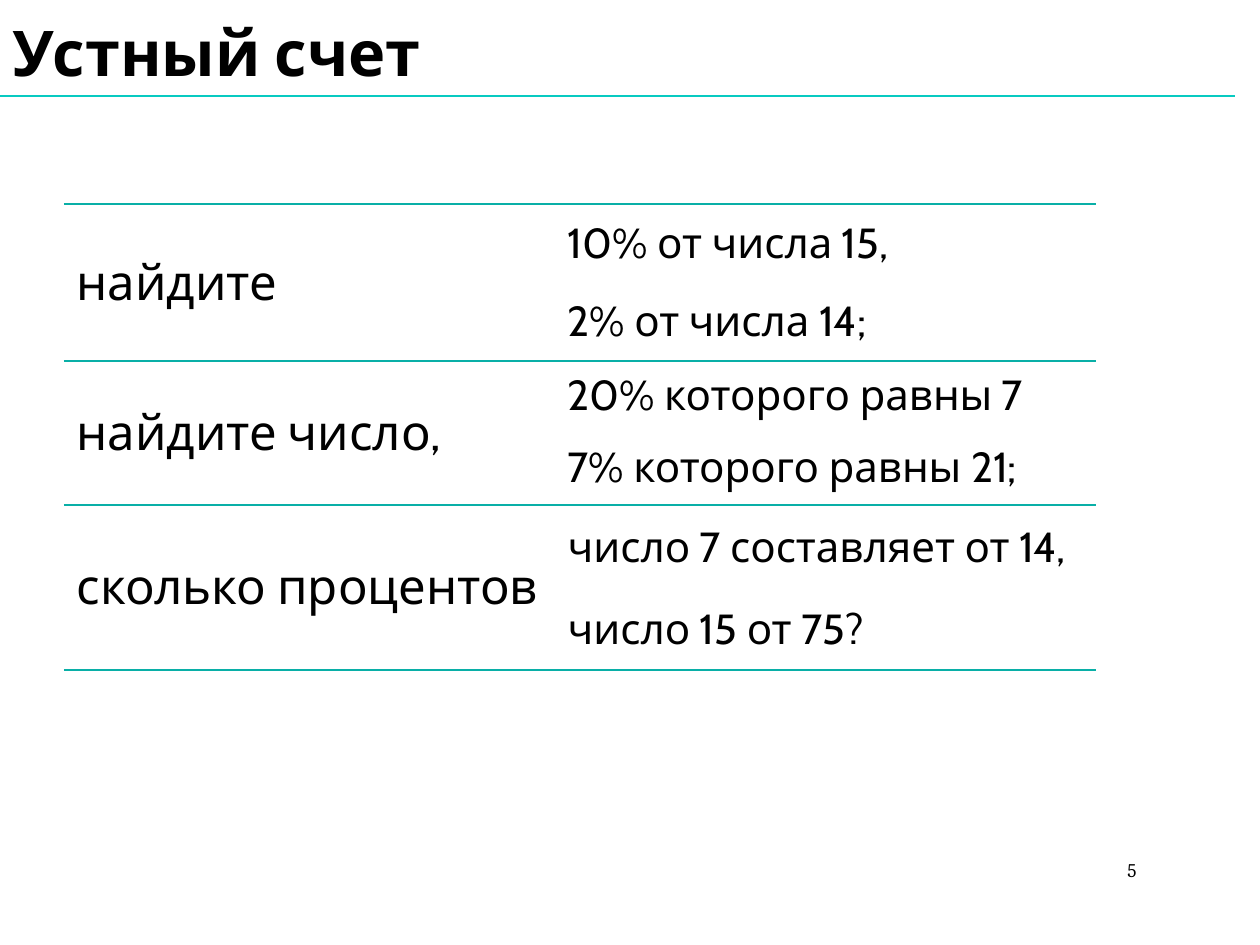
import pptx
import pptx.util
import pptx.oxml
import pptx.oxml.ns
import pptx.dml.color
import pptx.enum.shapes
import pptx.enum.text

PX = 914400 // 126
COLORS = {"text": "000000", "title_rule": "08CAC1", "table_rule": "09AFA7"}
ALIGN = pptx.enum.text.PP_ALIGN
ANCHOR = pptx.enum.text.MSO_ANCHOR

FORMATS = {
    "title": {"name": "Cabin", "size": pptx.util.Pt(36), "bold": True},
    "task": {"name": "Cabin", "size": pptx.util.Pt(28), "bold": False},
    "example": {"name": "Cabin", "size": pptx.util.Pt(24), "bold": False},
    "number": {"name": "Cambria", "size": pptx.util.Pt(11), "bold": False},
}
TASKS = [
    ("найдите", ["10% от числа 15,", "2% от числа 14;"]),
    ("найдите число,", ["20% которого равны 7", "7% которого равны 21;"]),
    ("сколько процентов", ["число 7 составляет от 14,", "число 15 от 75?"]),
]
COLUMN_WIDTHS = [491, 541]
ROW_HEIGHTS = [79, 78, 69, 75, 85, 80]


def px(*lengths):
    return [pptx.util.Emu(length * PX) for length in lengths]


def rgb(color):
    return pptx.dml.color.RGBColor.from_string(COLORS[color])


def write(paragraph, text, style):
    run = paragraph.add_run()
    run.text = text
    for attribute, value in FORMATS[style].items():
        setattr(run.font, attribute, value)
    run.font.color.rgb = rgb("text")


def add_text(slide, box, text, style, anchor, align=ALIGN.LEFT, spacing=1.0):
    frame = slide.shapes.add_textbox(*px(*box)).text_frame
    frame.word_wrap = True
    frame.vertical_anchor = anchor
    paragraph = frame.paragraphs[0]
    paragraph.alignment = align
    paragraph.line_spacing = spacing
    write(paragraph, text, style)


def add_rule(slide, ends, color, width):
    rule = slide.shapes.add_connector(
        pptx.enum.shapes.MSO_CONNECTOR.STRAIGHT, *px(*ends))
    rule.line.color.rgb = rgb(color)
    rule.line.width = pptx.util.Pt(width)
    pptx.oxml.ns.qn("a:effectLst")
    rule._element.spPr.append(pptx.oxml.parse_xml(
        f'<a:effectLst {pptx.oxml.ns.nsdecls("a")}/>'))


def set_borders(cell, ruled_sides):
    """Rule the given sides and clear the others; borders precede the fill."""
    properties = cell._tc.get_or_add_tcPr()
    for index, side in enumerate(["L", "R", "T", "B"]):
        fill = "<a:noFill/>"
        if side in ruled_sides:
            fill = (f'<a:solidFill><a:srgbClr val="{COLORS["table_rule"]}"/>'
                    '</a:solidFill>')
        properties.insert(index, pptx.oxml.parse_xml(
            f'<a:ln{side} {pptx.oxml.ns.nsdecls("a")} w="12700">'
            f'{fill}</a:ln{side}>'))


def format_cell(cell, ruled_sides):
    cell.fill.background()
    cell.vertical_anchor = ANCHOR.MIDDLE
    cell.margin_top, cell.margin_bottom = px(4, 4)
    set_borders(cell, ruled_sides)


def add_task_table(slide, left, top):
    table = slide.shapes.add_table(
        len(ROW_HEIGHTS), len(COLUMN_WIDTHS),
        *px(left, top, sum(COLUMN_WIDTHS), sum(ROW_HEIGHTS))).table
    table.first_row = False
    table.horz_banding = False
    for column, width in zip(table.columns, px(*COLUMN_WIDTHS)):
        column.width = width
    for row, height in zip(table.rows, px(*ROW_HEIGHTS)):
        row.height = height

    # Each task spans the two rows of its examples
    for index, (task, examples) in enumerate(TASKS):
        first = 2 * index
        task_cell = table.cell(first, 0)
        task_cell.merge(table.cell(first + 1, 0))
        write(task_cell.text_frame.paragraphs[0], task, "task")
        format_cell(task_cell, "TB")
        format_cell(table.cell(first + 1, 0), "B")
        for offset, (example, side) in enumerate(zip(examples, "TB")):
            cell = table.cell(first + offset, 1)
            write(cell.text_frame.paragraphs[0], example, "example")
            format_cell(cell, side)


def main():
    deck = pptx.Presentation()
    deck.slide_width, deck.slide_height = (
        pptx.util.Inches(10), pptx.util.Inches(7.5))
    slide = deck.slides.add_slide(deck.slide_layouts[6])

    # Slide number
    add_text(slide, (1047, 851, 102, 38), "5", "number",
             ANCHOR.MIDDLE, ALIGN.RIGHT)
    # Heading and its rule
    add_text(slide, (0, 4, 993, 92), "Устный счет", "title",
             ANCHOR.BOTTOM, spacing=0.9)
    add_rule(slide, (0, 96, 1235, 96), "title_rule", 1.5)
    # Tasks with their examples
    add_task_table(slide, 64, 204)

    deck.save("out.pptx")


if __name__ == "__main__":
    main()
